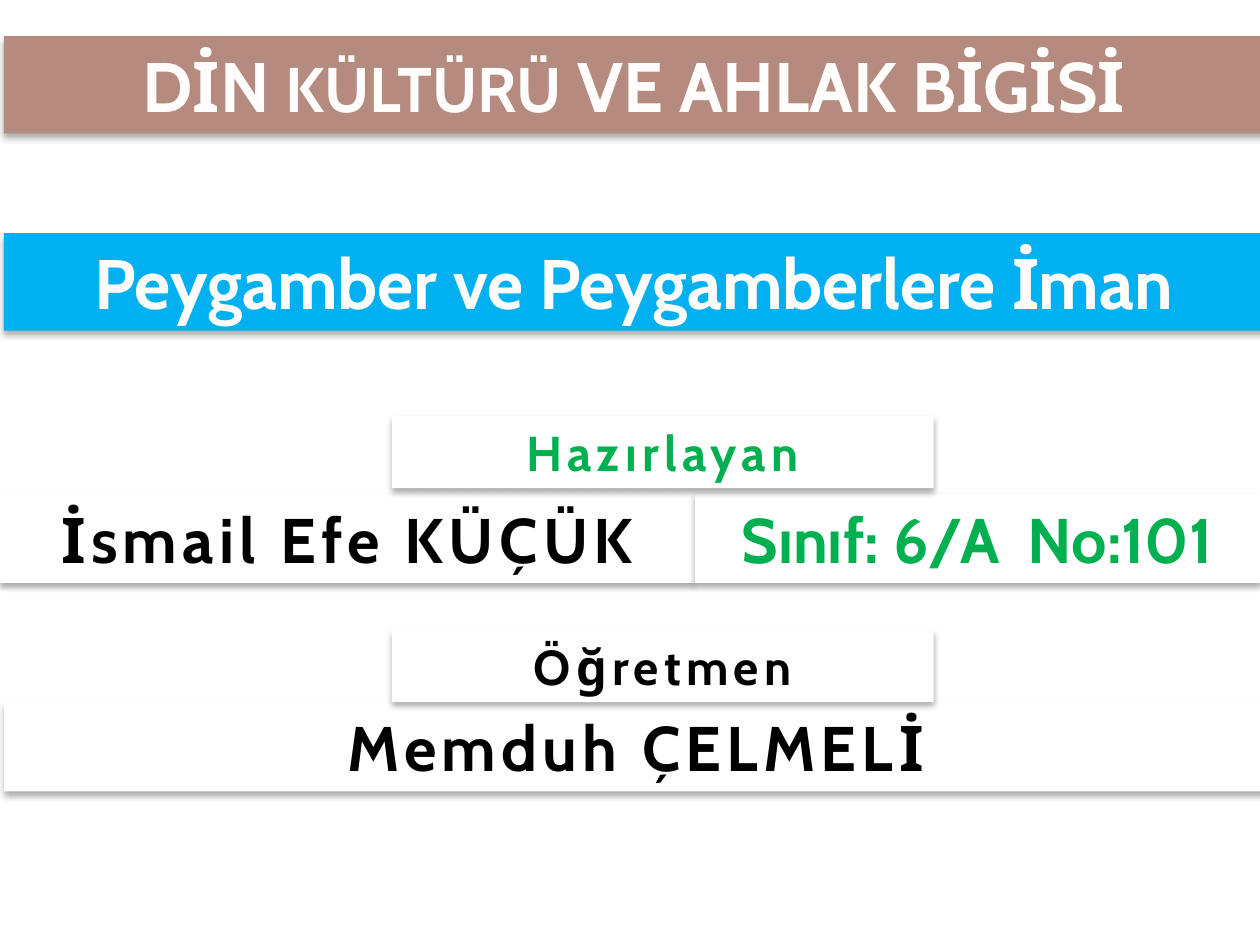
from lxml import etree
from pptx import Presentation
from pptx.dml.color import RGBColor
from pptx.enum.shapes import MSO_SHAPE
from pptx.enum.text import MSO_ANCHOR, MSO_AUTO_SIZE, PP_ALIGN
from pptx.oxml.ns import qn
from pptx.util import Pt

RECTANGLE = MSO_SHAPE.RECTANGLE
CENTER = PP_ALIGN.CENTER
MIDDLE = MSO_ANCHOR.MIDDLE
GROW = MSO_AUTO_SIZE.SHAPE_TO_FIT_TEXT
FONT = "Cabin"
WHITE = RGBColor(0xFF, 0xFF, 0xFF)
CREAM = RGBColor(0xFF, 0xFD, 0xFC)
BLACK = RGBColor(0, 0, 0)
GREEN = RGBColor(0x00, 0xB0, 0x50)
BLUE = RGBColor(0x00, 0xB0, 0xF0)
BROWN = RGBColor(0xB5, 0x8B, 0x80)
ORANGE = RGBColor(0xFF, 0xA5, 0x1F)
PALE = RGBColor(0xFE, 0xF8, 0xF4)
GLOW = RGBColor(0xFF, 0xD5, 0x96)


def add_color(parent, color, alpha):
    """Append an RGB colour with an opacity in percent."""
    rgb = etree.SubElement(parent, qn("a:srgbClr"), val=str(color))
    etree.SubElement(rgb, qn("a:alpha"), val=str(alpha * 1000))


def add_shadow(effects, color, alpha, blur, distance, degrees):
    """Append an outer shadow to an effect list."""
    shadow = etree.SubElement(
        effects, qn("a:outerShdw"), blurRad=str(Pt(blur)), dist=str(Pt(distance)),
        dir=str(degrees * 60000), algn="tl", rotWithShape="0")
    add_color(shadow, color, alpha)


def add_outline(properties, color, width, alpha):
    """Put a solid outline around the letters of a run."""
    outline = etree.Element(qn("a:ln"), w=str(Pt(width)))
    add_color(etree.SubElement(outline, qn("a:solidFill")), color, alpha)
    properties.insert(0, outline)


def add_letter_glow(properties):
    """Give a run wide spacing, a pale outline and a warm shadow."""
    properties.set("spc", "300")
    add_outline(properties, PALE, 0.9, 100)
    effects = etree.Element(qn("a:effectLst"))
    properties.find(qn("a:solidFill")).addnext(effects)
    add_shadow(effects, GLOW, 60, 2, 1.5, 45)


def add_run(paragraph, text, size, color):
    """Add a bold run and return its properties element."""
    run = paragraph.add_run()
    run.text = text
    run.font.size = Pt(size)
    run.font.bold = True
    run.font.color.rgb = color
    run.font.name = FONT
    return run.font._element


def add_band(slide, left, top, width, height, fill):
    """Add a shadowed rectangle and return its centred paragraph."""
    band = slide.shapes.add_shape(RECTANGLE, Pt(left), Pt(top), Pt(width), Pt(height))
    band.fill.solid()
    band.fill.fore_color.rgb = fill
    band.line.fill.background()
    band.shadow.inherit = False
    add_shadow(band._element.spPr.find(qn("a:effectLst")), BLACK, 32, 3.5, 2.2, 90)
    frame = band.text_frame
    frame.word_wrap = True
    frame.auto_size = GROW
    frame.vertical_anchor = MIDDLE
    paragraph = frame.paragraphs[0]
    paragraph.alignment = CENTER
    return paragraph


def add_title(slide, top, fill, parts):
    """Add a full-width coloured title from (text, size) parts."""
    paragraph = add_band(slide, 2.2, top, 720, 55.7, fill)
    for text, size in parts:
        add_outline(add_run(paragraph, text, size, CREAM), ORANGE, 0.07, 55)


def add_label(slide, left, top, width, height, text, size, color, glowing=True):
    """Add a white band with one line of text."""
    paragraph = add_band(slide, left, top, width, height, WHITE)
    properties = add_run(paragraph, text, size, color)
    if glowing:
        add_letter_glow(properties)


def main():
    """Build the cover slide."""
    deck = Presentation()
    deck.slide_width, deck.slide_height = Pt(720), Pt(540)
    slide = deck.slides.add_slide(deck.slide_layouts[6])
    add_title(slide, 20.6, BROWN,
              [("DİN ", 40), ("KÜLTÜRÜ", 36), (" VE AHLAK BİGİSİ", 40)])
    add_label(slide, 0, 282.2, 397, 50.9, "İsmail Efe KÜÇÜK", 36, BLACK)
    add_label(slide, 397, 282.2, 323, 50.9, "Sınıf: 6/A  No:101", 36, GREEN, False)
    add_title(slide, 133.2, BLUE, [("Peygamber ve Peygamberlere İman", 40)])
    add_label(slide, 2.2, 401.3, 722, 50.9, "Memduh ÇELMELİ", 36, BLACK)
    for top, role, color in ((237.8, "Hazırlayan", GREEN), (360, "Öğretmen", BLACK)):
        add_label(slide, 223.9, top, 309.6, 41.2, role, 28, color)
    deck.save("out.pptx")


if __name__ == "__main__":
    main()
